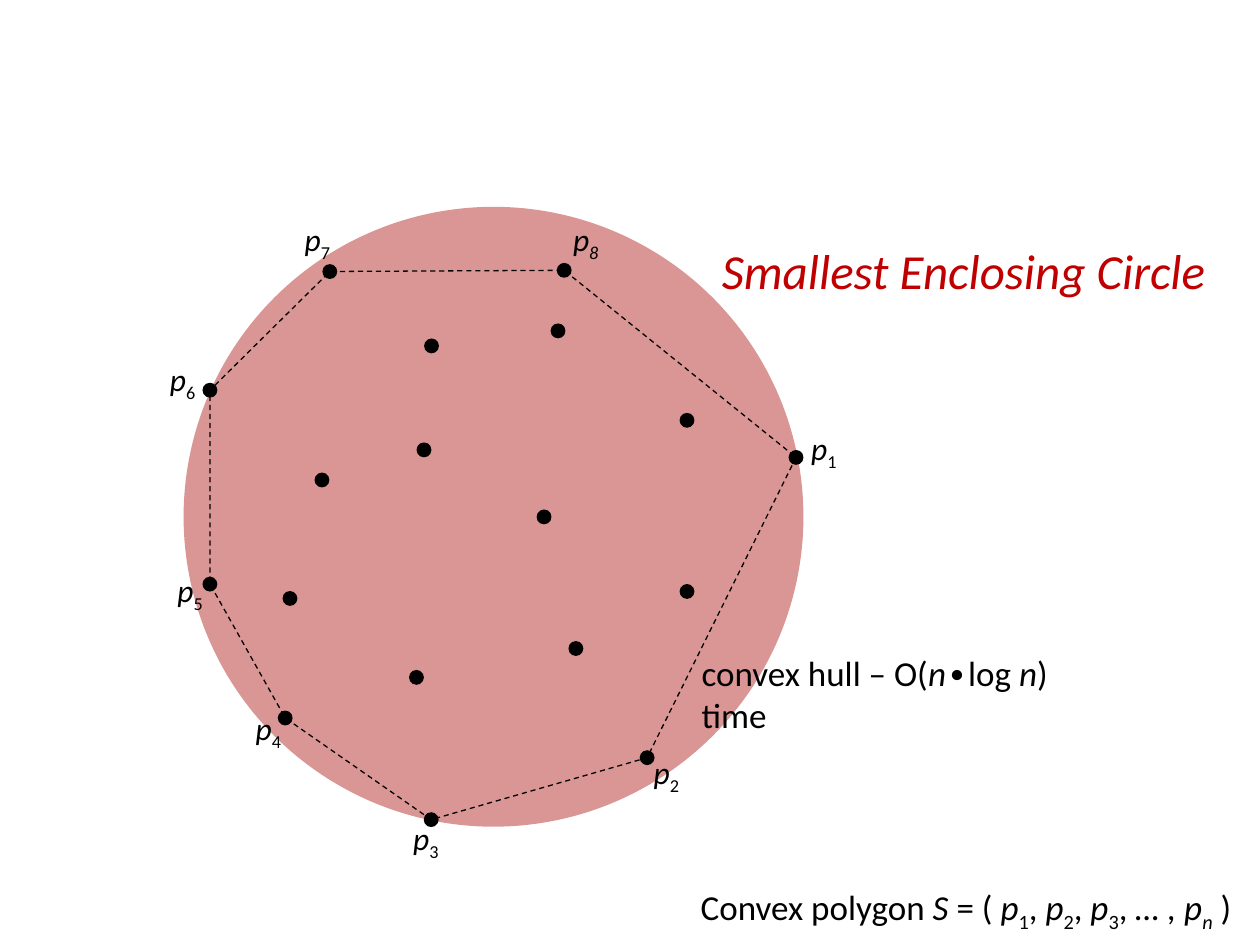
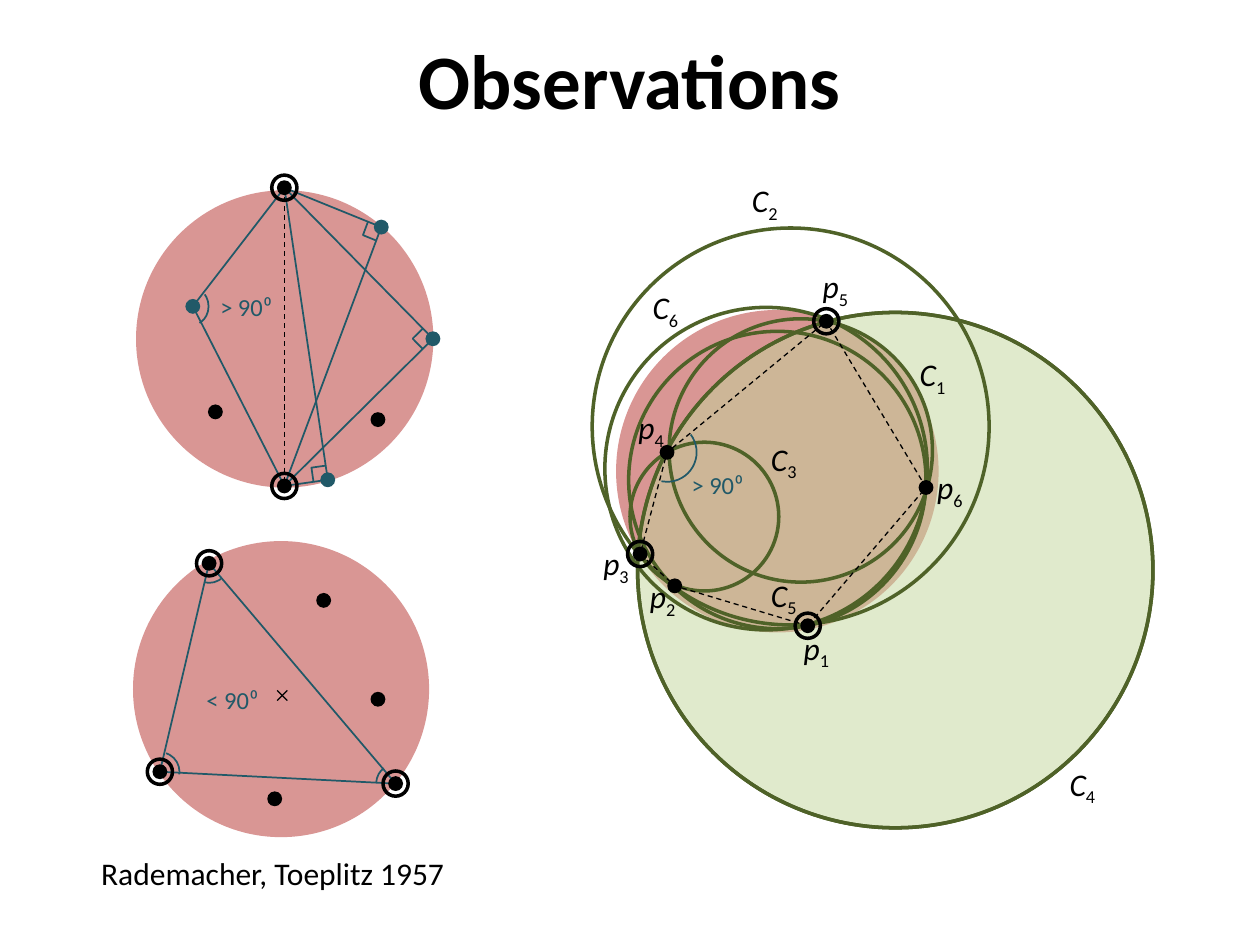
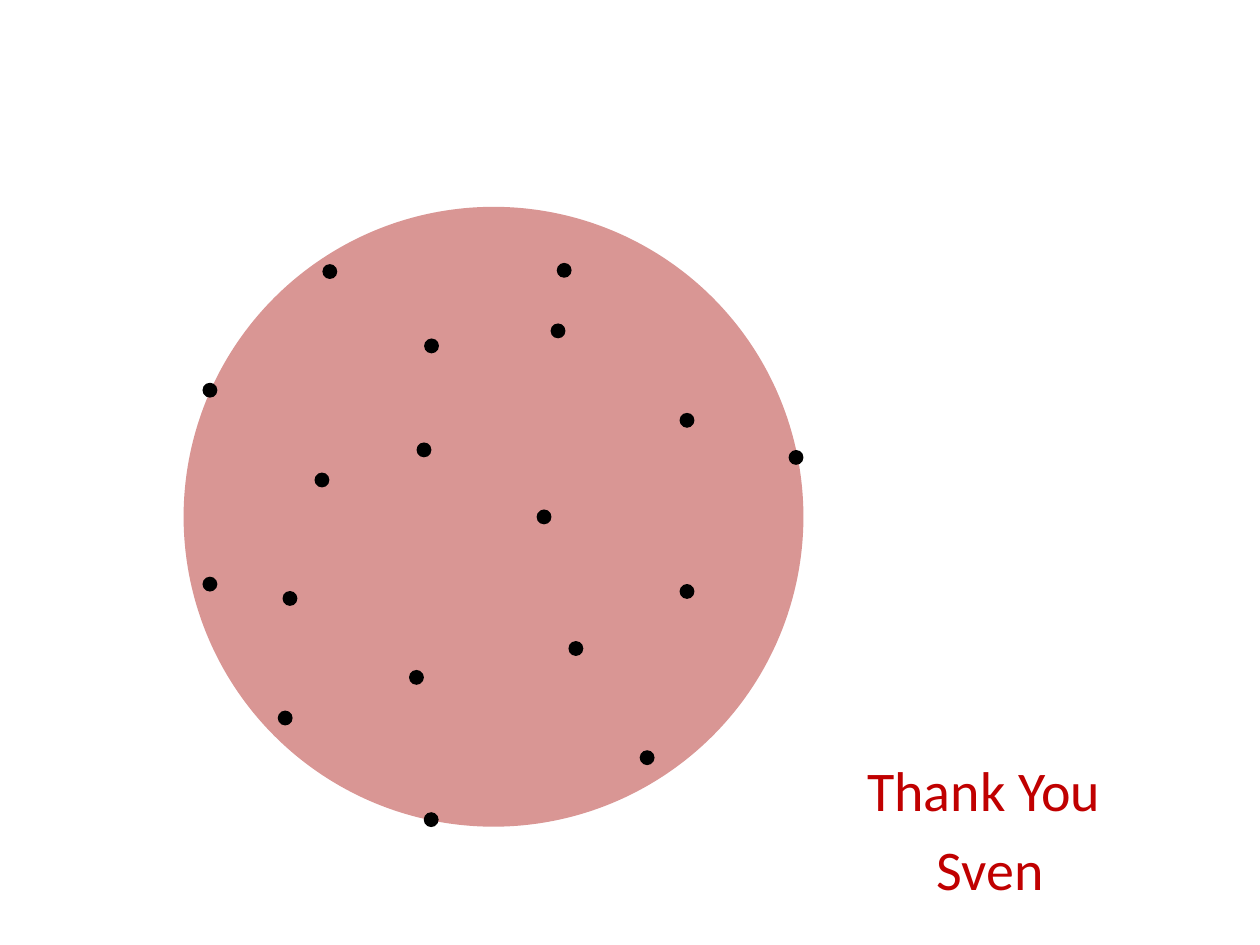
"""Build three slides about the smallest enclosing circle of a point set."""
import math
from dataclasses import dataclass

import lxml.etree
import pptx
import pptx.dml.color
import pptx.enum.dml
import pptx.enum.shapes
import pptx.enum.text
import pptx.oxml.ns
import pptx.util

Pt = pptx.util.Pt
SHAPE = pptx.enum.shapes.MSO_SHAPE
ALIGN = pptx.enum.text.PP_ALIGN
ANCHOR = pptx.enum.text.MSO_ANCHOR


@dataclass(frozen=True)
class Theme:
    font: str = "Calibri"
    ink: str = "000000"
    disc: str = "D99694"
    pale: str = "C3D69B"
    circle: str = "4F6228"
    angle: str = "215968"
    accent: str = "C00000"
    heading: float = 44
    closing: float = 32
    topic: float = 28
    body: float = 20
    label: float = 18
    small: float = 14
    thin: float = 0.75
    medium: float = 1
    thick: float = 2
    dot: float = 8.5
    ring: float = 14.4


THEME = Theme()

ENCLOSING = (282, 295.3, 354.2)
HULL = [
    (454.9, 261.4), (369.8, 433), (246.4, 468.4), (163, 410.3),
    (120, 333.8), (120, 223), (188.5, 155.2), (322.4, 154.5),
]
HULL_LABELS = [
    (456.5, 241.9), (366.5, 427), (229, 464.4), (139, 401.8),
    (94.3, 322.6), (90, 202.3), (167, 122.4), (320.4, 122.4),
]
INNER = [
    (392.6, 240.2), (165.7, 342), (242.3, 257.1), (318.9, 189.1), (329.1, 370.6),
    (238, 387.1), (184, 274.3), (246.6, 197.7), (310.9, 295.4), (392.6, 338),
]
TOPIC = [("Smallest Enclosing Circle", "i")]
RUNTIME = [("convex hull – O(", ""), ("n", "i"), ("∙log ", ""), ("n", "i"), (") time", "")]
POLYGON = [
    ("Convex polygon", ""), (" S ", "i"), ("= ( ", ""),
    ("p", "i"), ("1", "s"), (", ", ""), ("p", "i"), ("2", "s"), (", ", ""),
    ("p", "i"), ("3", "s"), (", ", ""), ("… , p", "i"), ("n", "is"), (" )", ""),
]

HEADING = "Observations"
CREDIT = "Rademacher, Toeplitz 1957"
DIAMETER_DISC = (162.7, 193.7, 169.9)
DIAMETER = [(162.5, 107.3), (162.5, 277.7)]
RIGHT_ANGLES = [(217.9, 129.8), (247.4, 193.6), (187.3, 274.2)]
RIGHT_ANGLE_SIZE = 8.2
OBTUSE = (110.2, 175.1)
DIAMETER_INNER = [(123.1, 235.4), (216, 239.8)]
TRIANGLE_DISC = (160.6, 393.8, 169.2)
TRIANGLE = [(91.4, 441), (119.5, 321.9), (226.1, 447.8)]
TRIANGLE_ARCS = [(288.5, 7.9), (52.4, 105.2), (182.3, 232.2)]
TRIANGLE_INNER = [(185, 343.1), (157, 456.5), (216, 399.6)]
CENTRE, CENTRE_ARM = (161.3, 397.4), 2.9
ANGLE_NOTES = [("> 90⁰", 118.8, 163.4), ("< 90⁰", 110.9, 388.1), ("> 90⁰", 388.1, 265)]

SOLUTION = (444.2, 269.3, 184.3)
CIRCLES = [
    (457.6, 257.4, 150.5), (451.8, 243.7, 226.8), (402.5, 295.2, 85),
    (511.6, 325.8, 294.5), (444.2, 274.3, 169.9), (437.8, 267.8, 184.3),
]
LARGEST = CIRCLES[3]
CIRCLE_LABELS = [
    (518.4, 199.4), (422.6, 100.1), (433.4, 247.7),
    (604.1, 433.4), (433.4, 325.4), (365.8, 161.3),
]
HEXAGON = [
    (461.6, 357.6), (385.6, 334.8), (365.8, 316.6),
    (381.2, 258.5), (472.2, 183.6), (529.2, 278.6),
]
HEXAGON_LABELS = [
    (452.2, 355.7), (364.3, 326.2), (337.7, 307.4),
    (357.8, 229.7), (463, 149), (528.5, 264.2),
]
CLOSING = ["Thank You", " Sven"]


def rgb(color):
    return pptx.dml.color.RGBColor.from_string(color)


def set_line(line, color, width, dashed=False):
    line.color.rgb = rgb(color)
    line.width = Pt(width)
    if dashed:
        line.dash_style = pptx.enum.dml.MSO_LINE.DASH


def style(shape, fill=None, line=None, width=THEME.thin, dashed=False):
    shape.shadow.inherit = False
    if fill:
        shape.fill.solid()
        shape.fill.fore_color.rgb = rgb(fill)
    else:
        shape.fill.background()
    if line:
        set_line(shape.line, line, width, dashed)
    else:
        shape.line.fill.background()
    return shape


def centred(slide, kind, x, y, width, height):
    return slide.shapes.add_shape(
        kind, Pt(x - width / 2), Pt(y - height / 2), Pt(width), Pt(height))


def disc(slide, x, y, diameter, **look):
    return style(centred(slide, SHAPE.OVAL, x, y, diameter, diameter), **look)


def dots(slide, points, color=THEME.ink):
    for x, y in points:
        disc(slide, x, y, THEME.dot, fill=color)


def rings(slide, points):
    for x, y in points:
        disc(slide, x, y, THEME.ring, line=THEME.ink, width=THEME.thick)


def outline(slide, points, close=False, **look):
    vertices = [(Pt(x), Pt(y)) for x, y in points]
    builder = slide.shapes.build_freeform(*vertices[0])
    builder.add_line_segments(vertices[1:], close=close)
    style(builder.convert_to_shape(), **look)


def segment(slide, start, end, dashed=False):
    line = slide.shapes.add_connector(
        pptx.enum.shapes.MSO_CONNECTOR.STRAIGHT, *(Pt(v) for v in (*start, *end)))
    set_line(line.line, THEME.ink, THEME.thin, dashed)
    lxml.etree.SubElement(line._element.spPr, pptx.oxml.ns.qn("a:effectLst"))


def arc(slide, x, y, width, height, start, end):
    curve = centred(slide, SHAPE.ARC, x, y, width, height)
    for index, degrees in enumerate((start, end)):
        curve.adjustments[index] = degrees * 0.6
    style(curve, line=THEME.angle, width=THEME.medium)


def right_angle(slide, corner):
    def toward(point):
        distance = math.dist(corner, point)
        return [(p - c) / distance * RIGHT_ANGLE_SIZE for p, c in zip(point, corner)]

    (ux, uy), (vx, vy) = (toward(end) for end in DIAMETER)
    x, y = corner
    outline(slide, [(x + ux, y + uy), (x + ux + vx, y + uy + vy), (x + vx, y + vy)],
            line=THEME.angle, width=THEME.medium)


def text(slide, box, paragraphs, size, color=THEME.ink, align=ALIGN.LEFT,
         bold=False, wrap=True, anchor=ANCHOR.TOP, before=0):
    frame = slide.shapes.add_textbox(*(Pt(v) for v in box)).text_frame
    frame.word_wrap = wrap
    frame.vertical_anchor = anchor
    for index, runs in enumerate(paragraphs):
        paragraph = frame.add_paragraph() if index else frame.paragraphs[0]
        paragraph.alignment = align
        paragraph.space_before = Pt(before)
        paragraph.font.name = THEME.font
        paragraph.font.size = Pt(size)
        paragraph.font.bold = bold
        paragraph.font.color.rgb = rgb(color)
        for words, marks in runs:
            run = paragraph.add_run()
            run.text = words
            if "i" in marks:
                run.font.italic = True
            if "s" in marks:
                run._r.get_or_add_rPr().set("baseline", "-25000")


def labels(slide, letter, places, italic_indices=()):
    for index, (x, y) in enumerate(places, 1):
        marks = "is" if index in italic_indices else "s"
        text(slide, (x, y, 33.8, 28.8), [[(letter, "i"), (str(index), marks)]], THEME.label)


def point_set(slide, with_hull=False):
    disc(slide, *ENCLOSING, fill=THEME.disc)
    dots(slide, INNER)
    if with_hull:
        outline(slide, HULL, close=True, line=THEME.ink, dashed=True)
    dots(slide, HULL)


def hull_slide(slide):
    point_set(slide, with_hull=True)
    text(slide, (405.4, 133.9, 293, 41), [TOPIC], THEME.topic, THEME.accent, wrap=False)
    text(slide, (393.8, 368.6, 248.4, 31.7), [RUNTIME], THEME.body)
    labels(slide, "p", HULL_LABELS, italic_indices=(8,))
    text(slide, (333.4, 502.6, 377.3, 31.7), [POLYGON], THEME.body, align=ALIGN.RIGHT)


def diameter_case(slide):
    angle = dict(line=THEME.angle, width=THEME.medium)
    disc(slide, *DIAMETER_DISC, fill=THEME.disc)
    segment(slide, *DIAMETER, dashed=True)
    for corner in RIGHT_ANGLES + [OBTUSE]:
        outline(slide, [DIAMETER[0], corner, DIAMETER[1]], **angle)
        dots(slide, [corner], THEME.angle)
    for corner in RIGHT_ANGLES:
        right_angle(slide, corner)
    arc(slide, *OBTUSE, 18, 20.9, 314.9, 68)
    dots(slide, DIAMETER_INNER + DIAMETER)
    rings(slide, DIAMETER)


def triangle_case(slide):
    disc(slide, *TRIANGLE_DISC, fill=THEME.disc)
    outline(slide, TRIANGLE, close=True, line=THEME.angle, width=THEME.medium)
    for corner, angles in zip(TRIANGLE, TRIANGLE_ARCS):
        arc(slide, *corner, 22.3, 22.3, *angles)
    dots(slide, TRIANGLE_INNER + TRIANGLE)
    rings(slide, TRIANGLE)
    x, y = CENTRE
    for rise in (CENTRE_ARM, -CENTRE_ARM):
        segment(slide, (x - CENTRE_ARM, y - rise), (x + CENTRE_ARM, y + rise))


def hexagon_case(slide):
    disc(slide, *SOLUTION, fill=THEME.disc)
    veil = disc(slide, *LARGEST, fill=THEME.pale, line=THEME.circle, width=THEME.thick)
    tint = veil._element.spPr.find(
        f"{pptx.oxml.ns.qn('a:solidFill')}/{pptx.oxml.ns.qn('a:srgbClr')}")
    lxml.etree.SubElement(tint, pptx.oxml.ns.qn("a:alpha")).set("val", "50000")
    for circle in CIRCLES:
        disc(slide, *circle, line=THEME.circle, width=THEME.thick)
    labels(slide, "p", HEXAGON_LABELS)
    labels(slide, "C", CIRCLE_LABELS)
    dots(slide, HEXAGON)
    outline(slide, HEXAGON, close=True, line=THEME.ink, dashed=True)
    rings(slide, HEXAGON[::2])
    arc(slide, *HEXAGON[3], 33.8, 33.8, 323.2, 100.9)


def observations_slide(slide):
    text(slide, (36, 0, 648, 90), [[(HEADING, "")]], THEME.heading,
         align=ALIGN.CENTER, bold=True, anchor=ANCHOR.MIDDLE)
    hexagon_case(slide)
    diameter_case(slide)
    triangle_case(slide)
    for note, x, y in ANGLE_NOTES:
        text(slide, (x, y, 52.6, 24.5), [[(note, "")]], THEME.small, THEME.angle)
    text(slide, (36.7, 484.6, 238.3, 28.8), [[(CREDIT, "")]], THEME.label, align=ALIGN.CENTER)


def closing_slide(slide):
    point_set(slide)
    text(slide, (427.7, 428.4, 269.3, 113), [[(words, "")] for words in CLOSING],
         THEME.closing, THEME.accent, align=ALIGN.CENTER, before=0.2 * THEME.closing)


def main():
    deck = pptx.Presentation()
    deck.slide_width, deck.slide_height = Pt(720), Pt(540)
    for build in (hull_slide, observations_slide, closing_slide):
        build(deck.slides.add_slide(deck.slide_layouts[6]))
    deck.save("out.pptx")


if __name__ == "__main__":
    main()
